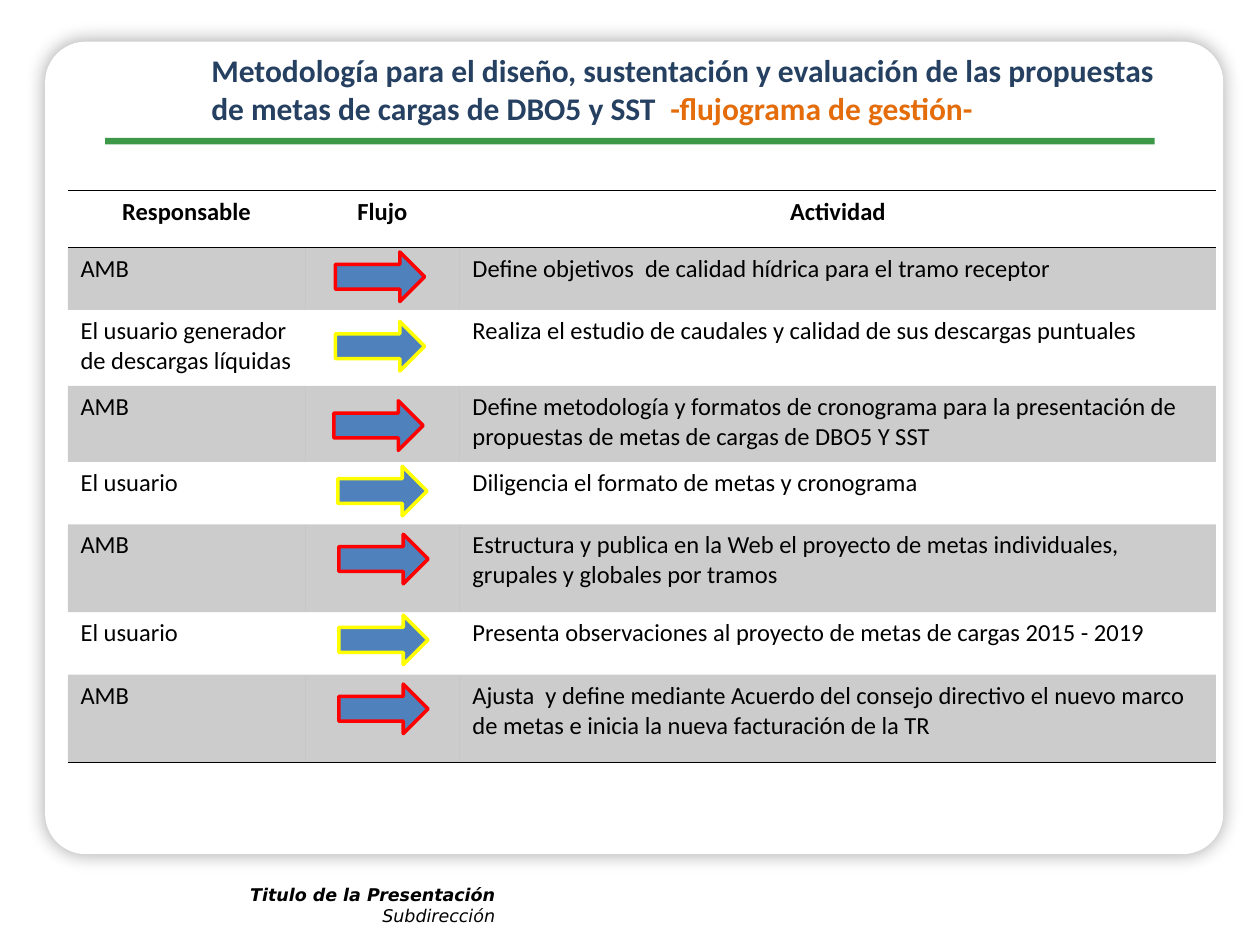
from lxml import etree
from pptx import Presentation
from pptx import util as u
from pptx.dml import color
from pptx.enum import shapes, text
from pptx.oxml import ns

BLACK, RED, YELLOW = "000000", "FF0000", "FFFF00"
NO_STYLE = "{2D5ABB26-0587-4C30-8999-92F81FD0307C}"
COLUMNS = [4.78, 3.12, 15.24]
ROW_HEIGHTS = [1.15, 1.26, 1.53, 1.53, 1.26, 1.77, 1.26, 1.77]
HEADER = ["Responsable", "Flujo", "Actividad"]
STEPS = [
    ("AMB", "Define objetivos  de calidad hídrica para el tramo receptor"),
    ("El usuario generador de descargas líquidas",
     "Realiza el estudio de caudales y calidad de sus descargas puntuales"),
    ("AMB", "Define metodología y formatos de cronograma para la presentación de "
            "propuestas de metas de cargas de DBO5 Y SST"),
    ("El usuario", "Diligencia el formato de metas y cronograma"),
    ("AMB", "Estructura y publica en la Web el proyecto de metas individuales, "
            "grupales y globales por tramos"),
    ("El usuario", "Presenta observaciones al proyecto de metas de cargas 2015 - 2019"),
    ("AMB", "Ajusta  y define mediante Acuerdo del consejo directivo el nuevo marco "
            "de metas e inicia la nueva facturación de la TR"),
]
ARROWS = [(6.76, 5.08), (6.76, 6.48), (6.73, 8.08), (6.81, 9.4),
          (6.83, 10.77), (6.83, 12.4), (6.83, 13.79)]


def rgb(value):
    """Return the colour of a hex string."""
    return color.RGBColor.from_string(value)


def style(font, size, name, hex_color, bold=False, italic=False):
    """Set the look of a font."""
    font.size, font.name = u.Pt(size), name
    font.bold, font.italic = bold, italic
    font.color.rgb = rgb(hex_color)


def add_child(parent, tag, **attrs):
    """Append a drawing element with attributes."""
    child = etree.SubElement(parent, ns.qn(tag))
    for key, value in attrs.items():
        child.set(key, str(value))
    return child


def add_box(s, kind, left, top, width, height, fill, line=None):
    """Add a filled shape without shadow."""
    sp = s.shapes.add_shape(kind, u.Cm(left), u.Cm(top), u.Cm(width), u.Cm(height))
    sp.shadow.inherit = False
    sp.fill.solid()
    sp.fill.fore_color.rgb = rgb(fill)
    if line:
        sp.line.color.rgb = rgb(line)
        sp.line.width = u.Pt(2)
    else:
        sp.line.fill.background()
    return sp


def add_soft_shadow(sp):
    """Give a shape a blurred shadow on all sides."""
    effects = sp.element.spPr.find(ns.qn("a:effectLst"))
    shadow = add_child(effects, "a:outerShdw", blurRad=u.Pt(10.8), dist=0,
                       dir=5400000, rotWithShape=0)
    add_child(add_child(shadow, "a:srgbClr", val=BLACK), "a:alpha", val=35000)


def add_text(s, left, top, width, height):
    """Add a wrapping text box and return its frame."""
    sp = s.shapes.add_textbox(u.Cm(left), u.Cm(top), u.Cm(width), u.Cm(height))
    sp.text_frame.word_wrap = True
    return sp.text_frame


def add_title(s):
    """Add the two-coloured title."""
    tf = add_text(s, 4.01, 0.86, 20.02, 2.95)
    tf.margin_top = u.Cm(0.17)
    p = tf.paragraphs[0]
    for words, hex_color in [
        ("Metodología para el diseño, sustentación y evaluación de las propuestas "
         "de metas de cargas de DBO5 y SST ", "254061"),
        (" -flujograma de gestión-", "E46C0A"),
    ]:
        r = p.add_run()
        r.text = words
        style(r.font, 18, "Calibri", hex_color, bold=True)


def add_footer(s):
    """Add the right-aligned footer."""
    tf = add_text(s, 2.03, 17.7, 8.2, 1.12)
    tf.text = "Titulo de la Presentación\nSubdirección"
    for p, bold in zip(tf.paragraphs, (True, False)):
        p.alignment = text.PP_ALIGN.RIGHT
        style(p.runs[0].font, 10, "DejaVu Sans", BLACK, bold, True)


def format_cell(cell, words, header, shaded, borders):
    """Write a cell and set its fill and black rules."""
    cell.text = words
    p = cell.text_frame.paragraphs[0]
    p.alignment = text.PP_ALIGN.CENTER if header else text.PP_ALIGN.LEFT
    style(p.font, 14, "Calibri", BLACK, bold=header)
    for r in p.runs:
        style(r.font, 14, "Calibri", BLACK, bold=header)
    tc_pr = cell._tc.get_or_add_tcPr()
    for tag in borders:
        line = add_child(tc_pr, tag, w=u.Pt(1))
        add_child(add_child(line, "a:solidFill"), "a:srgbClr", val=BLACK)
    if shaded:
        cell.fill.solid()
        cell.fill.fore_color.rgb = rgb(BLACK)
        add_child(next(tc_pr.find(ns.qn("a:solidFill")).iterchildren()),
                  "a:alpha", val=20000)
    else:
        cell.fill.background()


def add_steps_table(s):
    """Add the table of responsible parties and activities."""
    rows = [HEADER] + [(who, "", activity) for who, activity in STEPS]
    frame = s.shapes.add_table(len(rows), len(COLUMNS), u.Cm(1.37), u.Cm(3.84),
                               u.Cm(sum(COLUMNS)), u.Cm(sum(ROW_HEIGHTS)))
    table = frame.table
    table.horz_banding = False
    next(frame.element.iter(ns.qn("a:tableStyleId"))).text = NO_STYLE
    for column, width in zip(table.columns, COLUMNS):
        column.width = u.Cm(width)
    for i, (row, height) in enumerate(zip(table.rows, ROW_HEIGHTS)):
        row.height = u.Cm(height)
        borders = {0: ["a:lnT", "a:lnB"], len(STEPS): ["a:lnB"]}.get(i, [])
        for cell, words in zip(row.cells, rows[i]):
            format_cell(cell, words, i == 0, i % 2 == 1, borders)


def main():
    """Build the slide and save it."""
    prs = Presentation()
    prs.slide_width, prs.slide_height = u.Cm(25.4), u.Cm(19.05)
    s = prs.slides.add_slide(prs.slide_layouts[6])
    kind = shapes.MSO_SHAPE
    panel = add_box(s, kind.ROUNDED_RECTANGLE, 0.91, 0.84, 23.75, 16.38, "FFFFFF")
    panel.adjustments[0] = 0.05
    add_soft_shadow(panel)
    add_box(s, kind.RECTANGLE, 2.12, 2.78, 21.16, 0.13, "3D9948")
    add_footer(s)
    add_title(s)
    add_steps_table(s)
    for i, (left, top) in enumerate(ARROWS):
        add_box(s, kind.RIGHT_ARROW, left, top, 1.8, 1, "4F81BD", YELLOW if i % 2 else RED)
    prs.save("out.pptx")


if __name__ == "__main__":
    main()
